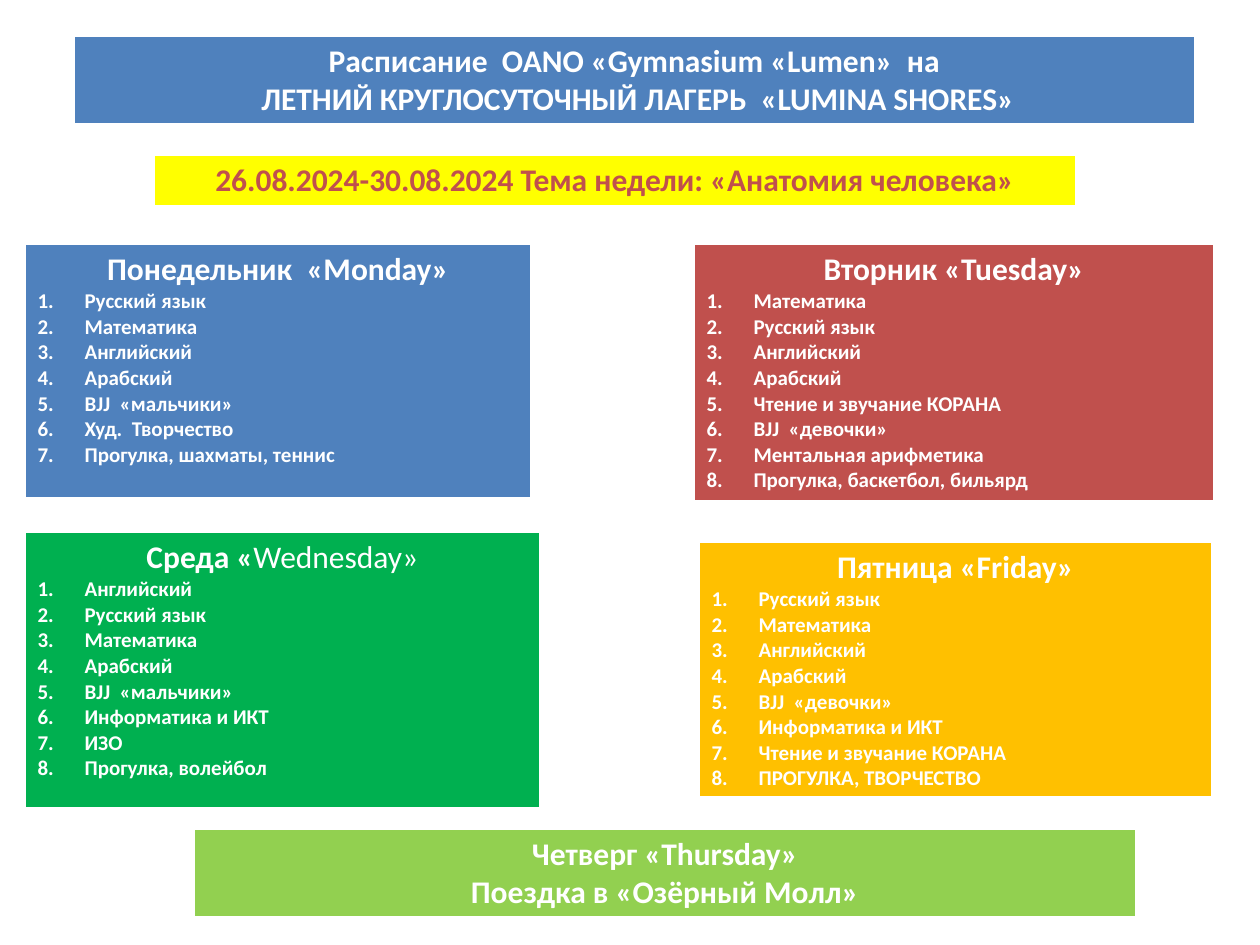
from dataclasses import dataclass

from lxml.etree import SubElement
from pptx import Presentation
from pptx.dml.color import RGBColor
from pptx.enum.text import PP_ALIGN
from pptx.oxml import parse_xml
from pptx.oxml.ns import nsdecls, qn
from pptx.slide import Slide
from pptx.table import _Cell
from pptx.text.text import _Paragraph
from pptx.util import Emu, Inches, Pt

PIXELS_PER_INCH = 126


def px(length: int) -> Emu:
    return Emu(round(length * Inches(1) / PIXELS_PER_INCH))


@dataclass(frozen=True)
class Theme:
    font: str = "Calibri"
    heading_size: int = 18
    lesson_size: int = 12
    white: str = "FFFFFF"
    blue: str = "4F81BD"
    red: str = "C0504D"
    green: str = "00B050"
    amber: str = "FFC000"
    lime: str = "92D050"
    yellow: str = "FFFF00"
    border: int = 1
    bottom_border: int = 3
    lesson_indent: int = 47


THEME = Theme()


@dataclass(frozen=True)
class Panel:
    """A one-cell table: centred headings above an optional numbered list."""
    left: int
    top: int
    width: int
    height: int
    fill: str
    headings: tuple[str, ...]
    lessons: tuple[str, ...] = ()
    color: str = THEME.white
    light_ending: str = ""


PANELS = (
    Panel(25, 244, 506, 255, THEME.blue, ("Понедельник  «Monday»",),
          ("Русский язык", "Математика", "Английский", "Арабский",
           "BJJ  «мальчики»", "Худ.  Творчество", "Прогулка, шахматы, теннис")),
    Panel(25, 532, 515, 277, THEME.green, ("Среда «",),
          ("Английский", "Русский язык", "Математика", "Арабский",
           "BJJ  «мальчики»", "Информатика и ИКТ", "ИЗО", "Прогулка, волейбол"),
          light_ending="Wednesday»"),
    Panel(699, 542, 513, 252, THEME.amber, ("Пятница «Friday»",),
          ("Русский язык", "Математика", "Английский", "Арабский",
           "BJJ  «девочки»", "Информатика и ИКТ", "Чтение и звучание КОРАНА",
           "ПРОГУЛКА, ТВОРЧЕСТВО")),
    Panel(154, 155, 922, 52, THEME.yellow,
          ("26.08.2024-30.08.2024 Тема недели: «Анатомия человека»",),
          color=THEME.red),
    Panel(194, 829, 942, 88, THEME.lime,
          ("Четверг «Thursday»", "Поездка в «Озёрный Молл»")),
    Panel(694, 244, 520, 258, THEME.red, ("Вторник «Tuesday»",),
          ("Математика", "Русский язык", "Английский", "Арабский",
           "Чтение и звучание КОРАНА", "BJJ  «девочки»",
           "Ментальная арифметика", "Прогулка, баскетбол, бильярд")),
    Panel(74, 36, 1121, 88, THEME.blue,
          ("Расписание  OANO «Gymnasium «Lumen»  на",
           " ЛЕТНИЙ КРУГЛОСУТОЧНЫЙ ЛАГЕРЬ  «LUMINA SHORES»")),
)


def set_borders(cell: _Cell) -> None:
    """Put the border lines before the fill, as the schema requires."""
    properties = cell._tc.get_or_add_tcPr()
    for position, side in enumerate("LRTB"):
        points = THEME.bottom_border if side == "B" else THEME.border
        properties.insert(position, parse_xml(
            f'<a:ln{side} {nsdecls("a")} w="{Pt(points)}"><a:solidFill>'
            f'<a:srgbClr val="{THEME.white}"/></a:solidFill></a:ln{side}>'))


def number_paragraph(paragraph: _Paragraph) -> None:
    properties = paragraph._p.get_or_add_pPr()
    indent = px(THEME.lesson_indent)
    properties.set("marL", str(indent))
    properties.set("indent", str(-indent))
    # Bullet elements must come before the paragraph's default run properties.
    defaults = properties.find(qn("a:defRPr"))
    SubElement(properties, qn("a:buFont"), typeface="+mj-lt")
    SubElement(properties, qn("a:buAutoNum"), type="arabicPeriod")
    properties.append(defaults)


def format_paragraph(paragraph: _Paragraph, size: int, color: str) -> None:
    font = paragraph.font
    font.name = THEME.font
    font.size = Pt(size)
    font.color.rgb = RGBColor.from_string(color)
    for run in paragraph.runs:
        # The table style outranks paragraph defaults, so runs carry these.
        run.font.bold = True
        run.font.color.rgb = RGBColor.from_string(color)


def draw_panel(slide: Slide, panel: Panel) -> None:
    table = slide.shapes.add_table(
        1, 1, px(panel.left), px(panel.top), px(panel.width), px(panel.height)).table
    table.horz_banding = False
    cell = table.cell(0, 0)
    cell.fill.solid()
    cell.fill.fore_color.rgb = RGBColor.from_string(panel.fill)
    set_borders(cell)

    frame = cell.text_frame
    frame.text = "\n".join(panel.headings + panel.lessons)
    for index, paragraph in enumerate(frame.paragraphs):
        if index < len(panel.headings):
            paragraph.alignment = PP_ALIGN.CENTER
            if panel.light_ending:
                paragraph.add_run().text = panel.light_ending
            format_paragraph(paragraph, THEME.heading_size, panel.color)
            if panel.light_ending:
                paragraph.runs[-1].font.bold = False
        else:
            format_paragraph(paragraph, THEME.lesson_size, panel.color)
            number_paragraph(paragraph)


def main() -> None:
    presentation = Presentation()
    presentation.slide_width = Inches(10)
    presentation.slide_height = Inches(7.5)
    slide = presentation.slides.add_slide(presentation.slide_layouts[6])
    for panel in PANELS:
        draw_panel(slide, panel)
    presentation.save("out.pptx")


if __name__ == "__main__":
    main()
